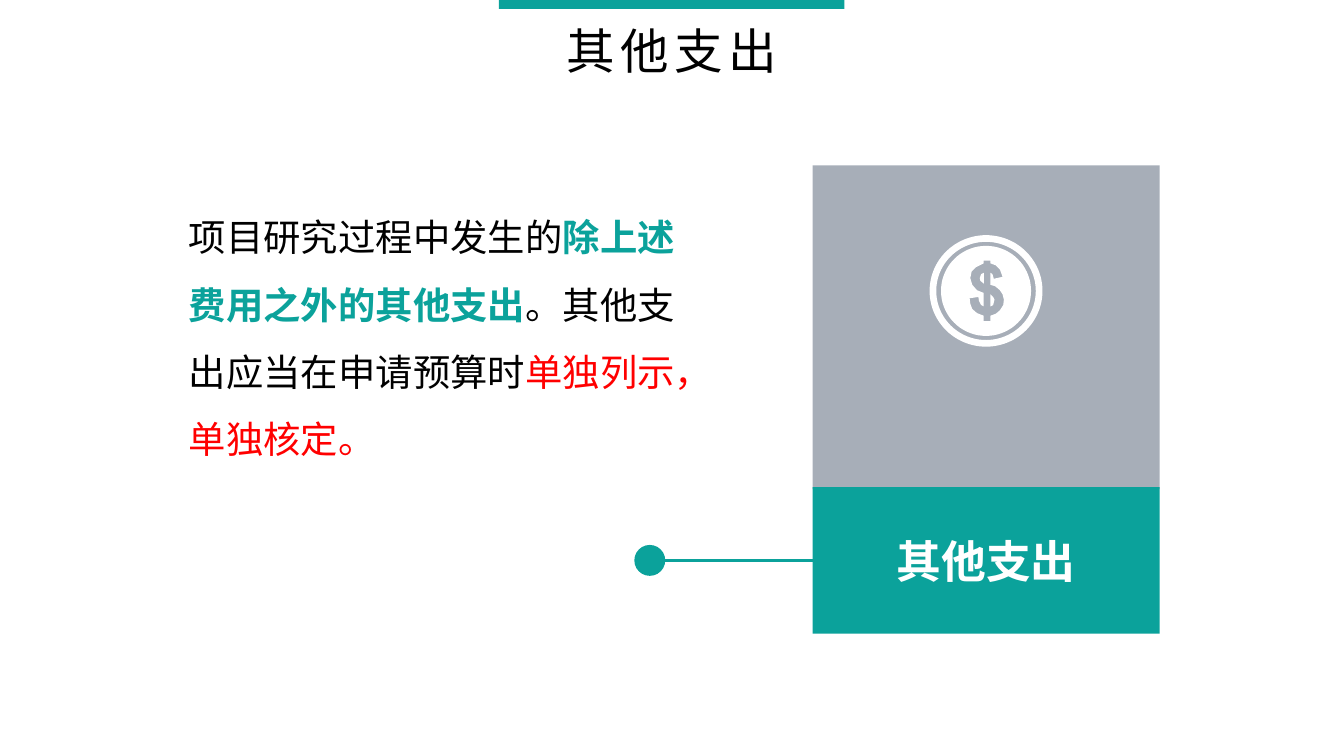
from math import cos, pi, sin
from typing import NamedTuple

from lxml.etree import SubElement
from pptx import Presentation
from pptx.dml.color import RGBColor
from pptx.enum.shapes import MSO_CONNECTOR, MSO_SHAPE
from pptx.enum.text import MSO_ANCHOR, PP_ALIGN
from pptx.oxml.ns import qn
from pptx.util import Inches, Pt

TEAL = RGBColor(0x0B, 0xA2, 0x9B)
SLATE = RGBColor(0x44, 0x54, 0x6A)
WHITE = RGBColor(0xFF, 0xFF, 0xFF)
BLACK = RGBColor(0x00, 0x00, 0x00)
RED = RGBColor(0xFF, 0x00, 0x00)
CJK_FONT = "Noto Sans CJK SC"
LABEL_FONT = "Quicksand"

SLIDE_WIDTH = Inches(10)
SLIDE_HEIGHT = SLIDE_WIDTH * 9 // 16
CELL = SLIDE_WIDTH / 100  # square grid, 100 columns wide

Point = tuple[float, float]


class Area(NamedTuple):
    column: float
    row: float
    columns: float
    rows: float


class Phrase(NamedTuple):
    text: str
    color: RGBColor = BLACK
    bold: bool = False


PANEL_LEFT, PANEL_COLUMNS = 60.46, 25.83
COIN_CENTER: Point = (73.37, 21.65)
DOT_CENTER: Point = (48.35, 41.7)
DOT_SIZE = 2.3

SENTENCE = [
    Phrase("项目研究过程中发生的"),
    Phrase("除上述费用之外的其他支出", TEAL, True),
    Phrase("。其他支出应当在申请预算时"),
    Phrase("单独列示，单独核定。", RED),
]

# Dollar sign, in grid cells
DOLLAR_OUTLINE: list[Point] = [
    (74.4, 23.1), (74.1, 23.35), (73.7, 23.5), (73.7, 23.9), (73.2, 23.9),
    (73.2, 23.5), (72.7, 23.3), (72.35, 23), (72.2, 22.6), (72.15, 22.2),
    (72.8, 22.1), (72.85, 22.4), (73, 22.7), (73.2, 22.8), (73.2, 21.8),
    (72.7, 21.6), (72.35, 21.2), (72.2, 20.7), (72.3, 20.2), (72.6, 19.9),
    (73.2, 19.6), (73.2, 19.4), (73.7, 19.4), (73.7, 19.6), (74.1, 19.75),
    (74.4, 20.05), (74.6, 20.6), (73.95, 20.75), (73.85, 20.4), (73.7, 20.3),
    (73.7, 21.2), (74.05, 21.3), (74.4, 21.6), (74.6, 21.9), (74.7, 22.3),
    (74.65, 22.7),
]
UPPER_COUNTER: list[Point] = [
    (72.9, 20.7), (72.95, 20.9), (73.2, 21.1), (73.2, 20.3), (73, 20.4),
]
LOWER_COUNTER: list[Point] = [
    (73.7, 21.9), (73.7, 22.8), (73.9, 22.7), (74, 22.3), (73.9, 22.1),
]


def cells(count: float) -> int:
    return round(count * CELL)


def place(area: Area) -> list[int]:
    return [cells(length) for length in area]


def paint(shape, color: RGBColor) -> None:
    shape.shadow.inherit = False
    shape.fill.solid()
    shape.fill.fore_color.rgb = color
    shape.line.fill.background()


def add_filled(shapes, kind: MSO_SHAPE, area: Area, color: RGBColor):
    shape = shapes.add_shape(kind, *place(area))
    paint(shape, color)
    return shape


def add_outline(shapes, contours: list[list[Point]], color: RGBColor) -> None:
    """Draw one shape from closed contours; an inner contour cuts a hole."""
    scaled = [[(cells(x), cells(y)) for x, y in contour] for contour in contours]
    builder = shapes.build_freeform(*scaled[0][0])
    builder.add_line_segments(scaled[0][1:])
    for hole in scaled[1:]:
        builder.move_to(*hole[0])
        builder.add_line_segments(hole[1:])
    paint(builder.convert_to_shape(), color)


def circle(center: Point, radius: float, steps: int = 72) -> list[Point]:
    angles = [2 * pi * step / steps for step in range(steps)]
    return [(center[0] + radius * cos(a), center[1] + radius * sin(a)) for a in angles]


def write(paragraph, phrases: list[Phrase], size: float, typeface: str) -> None:
    for phrase in phrases:
        run = paragraph.add_run()
        run.text = phrase.text
        run.font.size = Pt(size)
        run.font.bold = phrase.bold
        run.font.color.rgb = phrase.color
        run.font.name = typeface
        SubElement(run.font._element, qn("a:ea"), typeface=typeface)


def add_text(shapes, area: Area, phrases: list[Phrase], size: float, spacing: float):
    frame = shapes.add_textbox(*place(area)).text_frame
    frame.word_wrap = True
    paragraph = frame.paragraphs[0]
    paragraph.line_spacing = spacing
    write(paragraph, phrases, size, CJK_FONT)
    return paragraph


def add_heading(slide) -> None:
    heading = slide.shapes.add_group_shape().shapes
    add_filled(heading, MSO_SHAPE.RECTANGLE, Area(37.13, 0, 25.7, 0.67), TEAL)
    title = add_text(heading, Area(37.85, 1.1, 24.3, 5.4), [Phrase("其他支出")], 26, 1.0)
    title.alignment = PP_ALIGN.CENTER
    title.runs[0].font._element.set("spc", "300")


def add_panel(slide) -> None:
    backdrop = add_filled(slide.shapes, MSO_SHAPE.RECTANGLE,
                          Area(PANEL_LEFT, 12.3, PANEL_COLUMNS, 24.1), SLATE)
    tint = backdrop._element.spPr.find(qn("a:solidFill"))[0]
    SubElement(tint, qn("a:alpha"), val="47000")

    label = add_filled(slide.shapes, MSO_SHAPE.RECTANGLE,
                       Area(PANEL_LEFT, 36.24, PANEL_COLUMNS, 10.9), TEAL)
    frame = label.text_frame
    frame.margin_left = frame.margin_right = Inches(0.07)
    frame.margin_top = frame.margin_bottom = Inches(0.04)
    frame.vertical_anchor = MSO_ANCHOR.MIDDLE
    frame.paragraphs[0].alignment = PP_ALIGN.CENTER
    write(frame.paragraphs[0], [Phrase("其他支出", WHITE, True)], 24, LABEL_FONT)


def add_coin(slide) -> None:
    coin = slide.shapes.add_group_shape().shapes
    x, y = COIN_CENTER
    rim = add_filled(coin, MSO_SHAPE.DONUT, Area(x - 4.2, y - 4.15, 8.4, 8.3), WHITE)
    rim.adjustments[0] = 0.06
    add_outline(coin, [LOWER_COUNTER], WHITE)
    add_outline(coin, [circle(COIN_CENTER, 3.35), DOLLAR_OUTLINE], WHITE)
    add_outline(coin, [UPPER_COUNTER], WHITE)


def add_pointer(slide) -> None:
    x, y = DOT_CENTER
    stem = slide.shapes.add_connector(
        MSO_CONNECTOR.STRAIGHT, cells(x), cells(y), cells(65.3), cells(y))
    stem.line.color.rgb = TEAL
    stem.line.width = Pt(1.5)
    SubElement(stem._element.spPr, qn("a:effectLst"))
    half = DOT_SIZE / 2
    add_filled(slide.shapes, MSO_SHAPE.OVAL,
               Area(x - half, y - half, DOT_SIZE, DOT_SIZE), TEAL)


def main() -> None:
    presentation = Presentation()
    presentation.slide_width, presentation.slide_height = SLIDE_WIDTH, SLIDE_HEIGHT
    slide = presentation.slides.add_slide(presentation.slide_layouts[6])
    add_heading(slide)
    add_panel(slide)
    add_coin(slide)
    add_text(slide.shapes, Area(13.06, 13.8, 40.7, 21.2), SENTENCE, 20, 1.5)
    add_pointer(slide)
    presentation.save("out.pptx")


if __name__ == "__main__":
    main()
